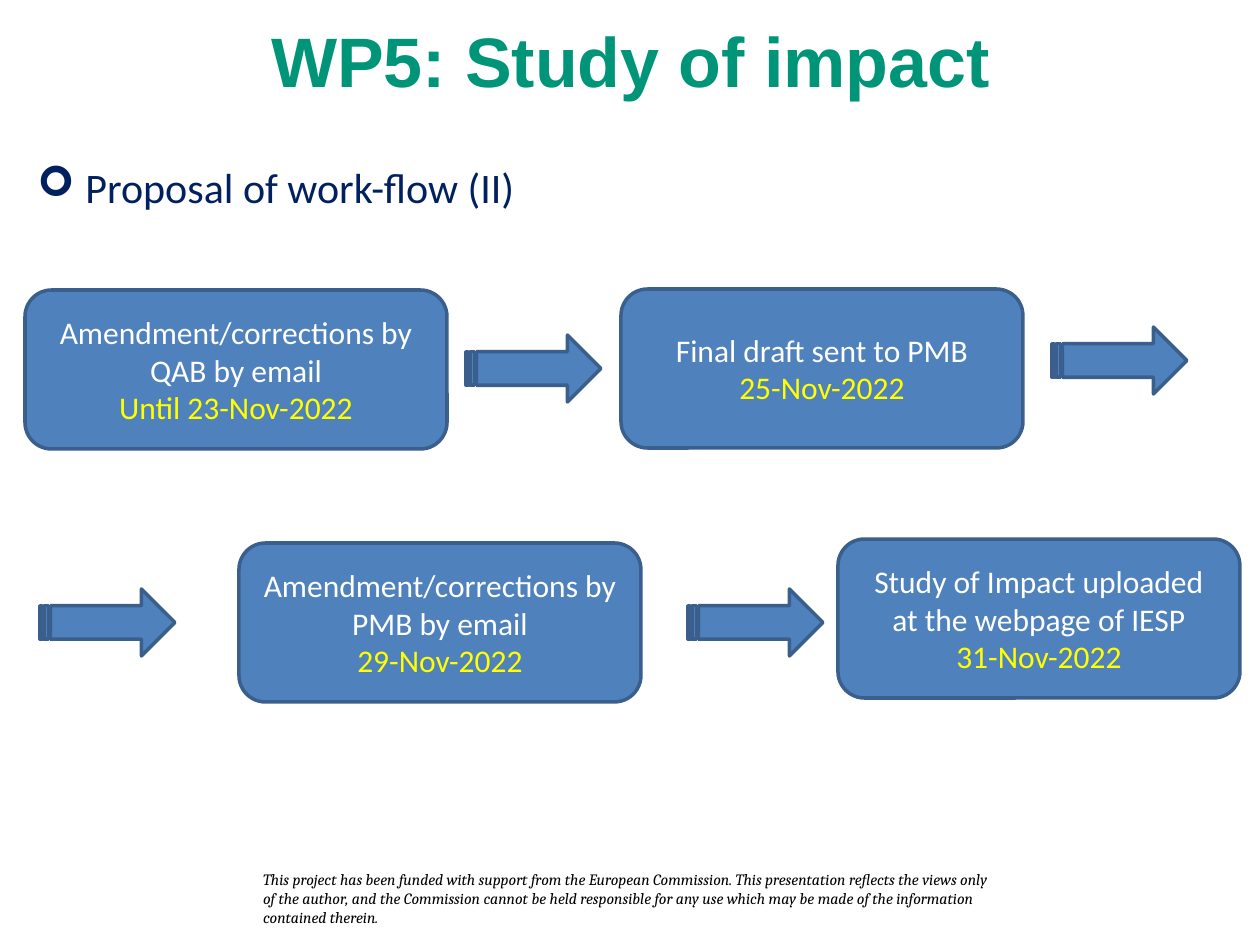
from pptx import Presentation
from pptx.dml.color import RGBColor
from pptx.enum.shapes import MSO_SHAPE as Shape
from pptx.enum.text import MSO_ANCHOR as Anchor, PP_ALIGN as Align
from pptx.oxml.ns import qn
from pptx.util import Emu, Pt
from lxml.etree import SubElement

PX = 914400 / 126
COLORS = {
    "title": "009578",
    "heading": "002060",
    "fill": "4F81BD",
    "outline": "3A5F8C",
    "step": "FFFFFF",
    "date": "FFFF00",
    "note": "000000",
}


def px(*lengths):
    return [Emu(round(length * PX)) for length in lengths]


class FlowSlide:
    body_font = "Calibri"

    def __init__(self, deck):
        self.shapes = deck.slides.add_slide(deck.slide_layouts[6]).shapes

    def style(self, paragraph, color, size, font=body_font, bold=False, italic=False):
        for run in paragraph.runs:
            run.font.name = font
            run.font.size = Pt(size)
            run.font.bold = bold
            run.font.italic = italic
            run.font.color.rgb = RGBColor.from_string(COLORS[color])

    def text(self, words, box, color, size, align=Align.LEFT, anchor=Anchor.TOP,
             inset=True, **look):
        frame = self.shapes.add_textbox(*px(*box)).text_frame
        frame.word_wrap = True
        frame.vertical_anchor = anchor
        if not inset:
            frame.margin_left = frame.margin_right = 0
            frame.margin_top = frame.margin_bottom = 0
        frame.text = words
        paragraph = frame.paragraphs[0]
        paragraph.alignment = align
        self.style(paragraph, color, size, **look)
        return paragraph

    def bullet(self, words, box, color, size, indent):
        paragraph = self.text(words, box, color, size)
        properties = paragraph._p.get_or_add_pPr()
        hang = px(indent)[0]
        properties.set("marL", str(hang))
        properties.set("indent", str(-hang))
        SubElement(properties, qn("a:buFont"), typeface="Wingdings")
        SubElement(properties, qn("a:buChar"), char="➢")

    def block(self, kind, box):
        block = self.shapes.add_shape(kind, *px(*box))
        block.shadow.inherit = False
        block.fill.solid()
        block.fill.fore_color.rgb = RGBColor.from_string(COLORS["fill"])
        block.line.color.rgb = RGBColor.from_string(COLORS["outline"])
        block.line.width = Pt(2)
        return block

    def step(self, task, date, left, top, width=402):
        frame = self.block(Shape.ROUNDED_RECTANGLE, (left, top, width, 159)).text_frame
        frame.word_wrap = True
        frame.vertical_anchor = Anchor.MIDDLE
        frame.text = f"{task}\n{date}"
        for paragraph, color in zip(frame.paragraphs, ("step", "date")):
            paragraph.alignment = Align.CENTER
            self.style(paragraph, color, 18)

    def arrow(self, left, top):
        self.block(Shape.STRIPED_RIGHT_ARROW, (left, top, 135, 67))


def main():
    deck = Presentation()
    deck.slide_width, deck.slide_height = px(1260, 945)
    slide = FlowSlide(deck)

    slide.text("WP5: Study of impact", (40, 19, 1181, 81), "title", 40,
               Align.CENTER, Anchor.MIDDLE, font="Arial", bold=True)
    slide.bullet("Proposal of work-flow (II)", (25, 155, 1160, 81), "heading", 24, 48)

    slide.step("Amendment/corrections by QAB by email", "Until 23-Nov-2022", 25, 290, 422)
    slide.step("Final draft sent to PMB", "25-Nov-2022", 621, 289)
    slide.step("Amendment/corrections by PMB by email", "29-Nov-2022", 239, 543)
    slide.step("Study of Impact uploaded at the webpage of IESP", "31-Nov-2022", 838, 539)

    for left, top in ((466, 335), (1052, 327), (40, 589), (688, 589)):
        slide.arrow(left, top)

    slide.text("This project has been funded with support from the European Commission. "
               "This presentation reflects the views only of the author, and the "
               "Commission cannot be held responsible for any use which may be made "
               "of the information contained therein.",
               (263, 870, 727, 57), "note", 9, inset=False, font="Cambria", italic=True)

    deck.save("out.pptx")


if __name__ == "__main__":
    main()
